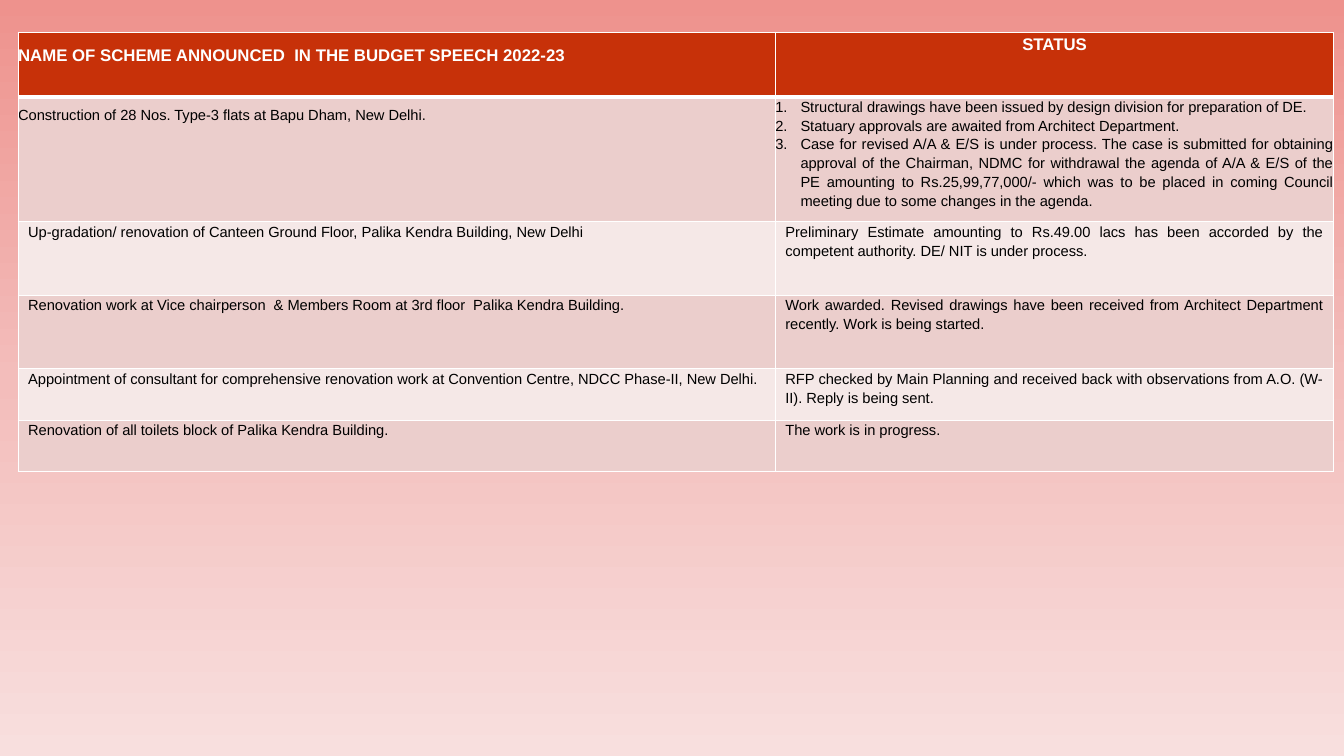
import copy
import pptx
import pptx.util
import pptx.oxml
import pptx.oxml.ns
import pptx.dml.color
import pptx.enum.text

Inches, Pt = pptx.util.Inches, pptx.util.Pt
RGB = pptx.dml.color.RGBColor.from_string
ALIGN, ANCHOR = pptx.enum.text.PP_ALIGN, pptx.enum.text.MSO_ANCHOR
qn, nsdecls = pptx.oxml.ns.qn, pptx.oxml.ns.nsdecls

COLORS = {"header": "C73109", "odd": "EBCECC", "even": "F5E8E7",
          "white": "FFFFFF", "text": "000000",
          "top": "EE928D", "middle": "F3BDBB", "bottom": "F8DFDE"}
COLS = [7.51, 5.54]
ROWS = [0.64, 1.24, 0.73, 0.73, 0.51, 0.51]
SCHEMES = [
    (["NAME OF SCHEME ANNOUNCED  IN THE BUDGET SPEECH 2022-23"], ["STATUS"]),
    (["Construction of 28 Nos. Type-3 flats at Bapu Dham, New Delhi."],
     ["Structural drawings have been issued by design division for preparation of DE.",
      "Statuary approvals are awaited from Architect Department.",
      "Case for revised A/A & E/S is under process. The case is submitted for obtaining "
      "approval of the Chairman, NDMC for withdrawal the agenda of A/A & E/S of the PE "
      "amounting to Rs.25,99,77,000/- which was to be placed in coming Council meeting "
      "due to some changes in the agenda."]),
    (["Up-gradation/ renovation of Canteen Ground Floor, Palika Kendra Building, New Delhi"],
     ["Preliminary Estimate amounting to Rs.49.00 lacs has been accorded by the competent "
      "authority. DE/ NIT is under process."]),
    (["Renovation work at Vice chairperson  & Members Room at 3rd floor  Palika Kendra Building."],
     ["Work awarded. Revised drawings have been received from Architect Department recently. "
      "Work is being started."]),
    (["Appointment of consultant for comprehensive renovation work at Convention Centre, "
      "NDCC Phase-II, New Delhi."],
     ["RFP checked by Main Planning and received back with observations from A.O. (W-II). "
      "Reply is being sent."]),
    (["Renovation of all toilets block of Palika Kendra Building."],
     ["The work is in progress."]),
]
LIFT = {0: 0.2, 1: 0.9}


def add_border(cell, index, side, width):
    cell._tc.get_or_add_tcPr().insert(index, pptx.oxml.parse_xml(
        f'<a:{side} {nsdecls("a")} w="{Pt(width)}"><a:solidFill>'
        f'<a:srgbClr val="{COLORS["white"]}"/></a:solidFill></a:{side}>'))


prs = pptx.Presentation()
prs.slide_width, prs.slide_height = Inches(13.33), Inches(7.5)
s = prs.slides.add_slide(prs.slide_layouts[6])

fill = s.background.fill
fill.gradient()
fill.gradient_angle = 270
stops = s._element.find(".//" + qn("a:gsLst"))
stops.insert(1, copy.deepcopy(stops[0]))
for i, (stop, name) in enumerate(zip(fill.gradient_stops, ["top", "middle", "bottom"])):
    stop.position = i / 2
    stop.color.rgb = RGB(COLORS[name])

table = s.shapes.add_table(len(ROWS), len(COLS), Inches(0.18), Inches(0.32),
                           Inches(sum(COLS)), Inches(sum(ROWS))).table
table.first_row = table.horz_banding = False
for column, width in zip(table.columns, COLS):
    column.width = Inches(width)

for r, (row, height) in enumerate(zip(table.rows, ROWS)):
    row.height = Inches(height)
    header = r == 0
    for c, cell in enumerate(row.cells):
        cell.fill.solid()
        cell.fill.fore_color.rgb = RGB(COLORS["header" if header else "odd" if r % 2 else "even"])
        cell.margin_left = cell.margin_right = Inches(0.1 if r > 1 else 0)
        cell.margin_top = cell.margin_bottom = 0
        cell.vertical_anchor = ANCHOR.TOP
        if c == 0 and r in LIFT:
            cell.vertical_anchor = ANCHOR.MIDDLE
            cell.margin_bottom = Inches(LIFT[r])
        for i, side in enumerate(["lnL", "lnR", "lnT", "lnB"]):
            add_border(cell, i, side, 3 if header and side == "lnB" else 1)

        tf = cell.text_frame
        lines = SCHEMES[r][c]
        for i, line in enumerate(lines):
            p = tf.paragraphs[0] if i == 0 else tf.add_paragraph()
            p.alignment = ALIGN.CENTER if header and c == 1 else ALIGN.JUSTIFY
            p.line_spacing = 1.15
            if r > 1 and (c == 1 or r < 4):
                p.space_after = Pt(10)
            if len(lines) > 1:
                pPr = p._p.get_or_add_pPr()
                pPr.set("marL", str(Inches(0.25)))
                pPr.set("indent", str(-Inches(0.25)))
                pPr.append(pptx.oxml.parse_xml(
                    f'<a:buFont {nsdecls("a")} typeface="+mj-lt"/>'))
                pPr.append(pptx.oxml.parse_xml(
                    f'<a:buAutoNum {nsdecls("a")} type="arabicPeriod"/>'))
            run = p.add_run()
            run.text = line
            run.font.name = "Arial"
            run.font.size = Pt(12 if header else 10.5)
            run.font.bold = header
            run.font.color.rgb = RGB(COLORS["white" if header else "text"])

prs.save("out.pptx")
